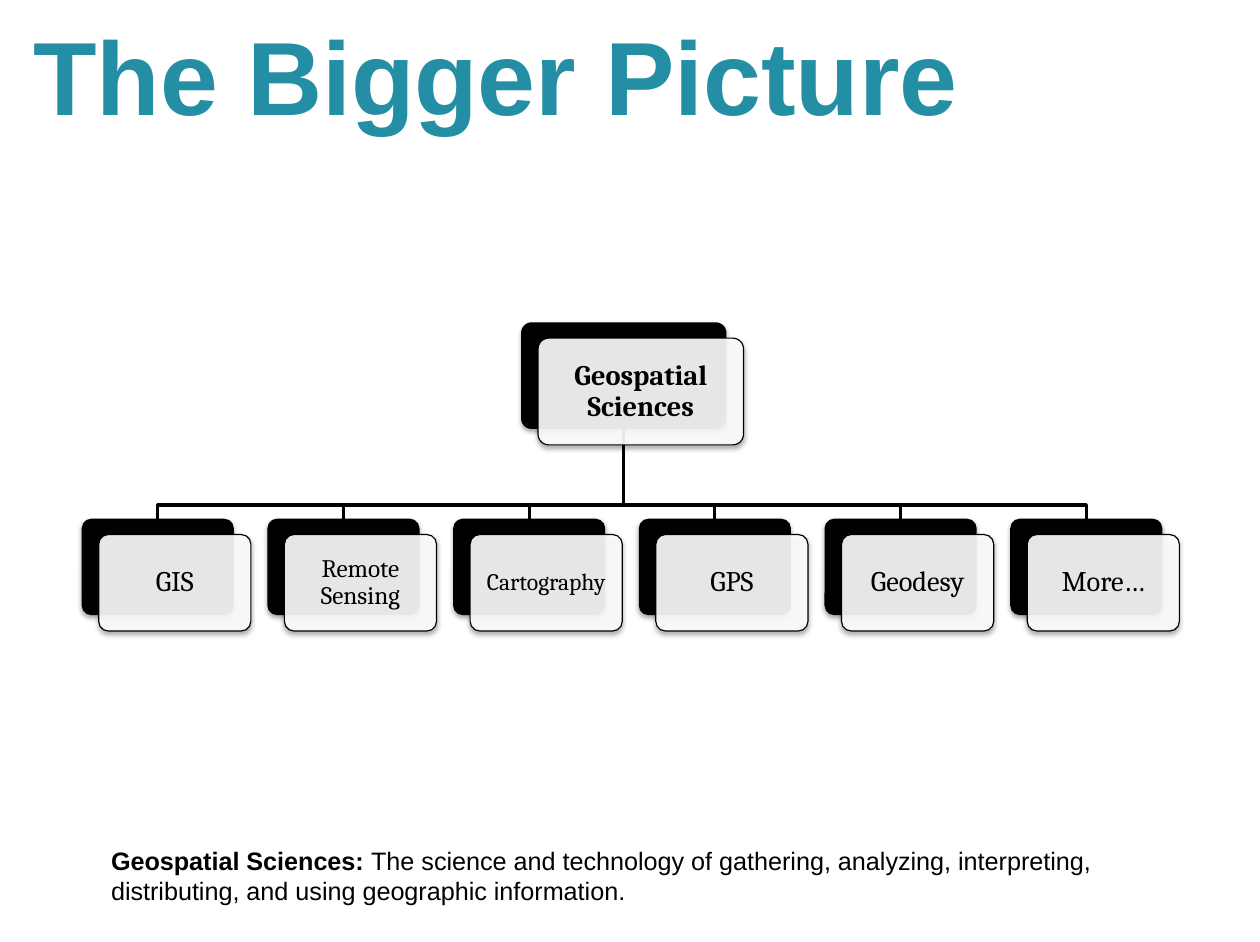
from lxml.etree import SubElement
from pptx import Presentation
from pptx.dml.color import RGBColor
from pptx.enum.shapes import MSO_SHAPE
from pptx.enum.text import MSO_ANCHOR, MSO_AUTO_SIZE, PP_ALIGN
from pptx.oxml.ns import qn
from pptx.util import Inches, Pt

SLIDE_WIDTH, SLIDE_HEIGHT = 11.1, 8.3
BLACK, WHITE, TEAL = "000000", "FFFFFF", "248FA4"

# Chart grid, in inches
FIRST_COLUMN, LAST_COLUMN = 0.72, 8.9
ROOT_ROW, BUS_ROW, BRANCH_ROW = 2.84, 4.45, 4.57
ROOT_LEFT, ROOT_WIDTH, ROOT_HEIGHT = 4.59, 1.81, 0.94
BRANCH_WIDTH, BRANCH_HEIGHT = 1.34, 0.85
CARD_SHIFT_X, CARD_SHIFT_Y = 0.15, 0.14

BRANCHES = [("GIS", 18), ("Remote Sensing", 16), ("Cartography", 15),
            ("GPS", 18), ("Geodesy", 18), ("More…", 18)]


def color(hex_value):
    return RGBColor.from_string(hex_value)


def apply(target, values):
    for name, value in values.items():
        setattr(target, name, value)


def write(paragraph, text, font_color, **font_values):
    run = paragraph.add_run()
    run.text = text
    apply(run.font, font_values)
    run.font.color.rgb = color(font_color)


def place(shape, left, top, width, height):
    apply(shape, {"left": Inches(left), "top": Inches(top),
                  "width": Inches(width), "height": Inches(height)})


def column_left(index):
    return FIRST_COLUMN + index * (LAST_COLUMN - FIRST_COLUMN) / (len(BRANCHES) - 1)


def add_soft_shadow(shape):
    shape.shadow.inherit = False
    effects = shape.element.spPr.find(qn("a:effectLst"))
    shadow = SubElement(effects, qn("a:outerShdw"), blurRad="40000", dist="23000",
                        dir="5400000", rotWithShape="0")
    tint = SubElement(shadow, qn("a:srgbClr"), val=BLACK)
    SubElement(tint, qn("a:alpha"), val="35000")


def add_plate(slide, left, top, width, height, fill_color):
    plate = slide.shapes.add_shape(MSO_SHAPE.ROUNDED_RECTANGLE, Inches(left), Inches(top),
                                   Inches(width), Inches(height))
    plate.adjustments[0] = 0.1
    plate.fill.solid()
    plate.fill.fore_color.rgb = color(fill_color)
    add_soft_shadow(plate)
    return plate


def add_node(slide, label, left, top, width, height, size, bold=False):
    backing = add_plate(slide, left, top, width, height, BLACK)
    backing.line.fill.background()

    card = add_plate(slide, left + CARD_SHIFT_X, top + CARD_SHIFT_Y, width, height, WHITE)
    card.line.color.rgb = color(BLACK)
    card.line.width = Pt(0.75)
    card_tint = card.element.spPr.find(qn("a:solidFill"))[0]
    SubElement(card_tint, qn("a:alpha"), val="90000")

    frame = card.text_frame
    inset = Inches(0.07)
    apply(frame, {"word_wrap": True, "vertical_anchor": MSO_ANCHOR.MIDDLE,
                  "margin_left": inset, "margin_right": inset,
                  "margin_top": inset, "margin_bottom": inset})
    paragraph = frame.paragraphs[0]
    apply(paragraph, {"alignment": PP_ALIGN.CENTER, "line_spacing": 0.9})
    write(paragraph, label, BLACK, name="Cambria", size=Pt(size), bold=bold)


def add_branch_line(slide, branch_center):
    root_center = ROOT_LEFT + ROOT_WIDTH / 2
    corners = [(root_center, ROOT_ROW + ROOT_HEIGHT), (root_center, BUS_ROW),
               (branch_center, BUS_ROW), (branch_center, BRANCH_ROW)]
    start, *bends = [(Inches(x), Inches(y)) for x, y in corners]
    builder = slide.shapes.build_freeform(*start)
    builder.add_line_segments(bends, close=False)
    branch_line = builder.convert_to_shape()
    branch_line.fill.background()
    branch_line.line.color.rgb = color(BLACK)
    branch_line.line.width = Pt(2)
    branch_line.shadow.inherit = False


def add_title(slide):
    title = slide.shapes.title
    place(title, 0.15, 0.05, 8.44, 1.21)
    apply(title.text_frame, {"word_wrap": False, "vertical_anchor": MSO_ANCHOR.TOP,
                             "auto_size": MSO_AUTO_SIZE.SHAPE_TO_FIT_TEXT})
    heading = title.text_frame.paragraphs[0]
    heading.alignment = PP_ALIGN.CENTER
    write(heading, "The Bigger Picture", TEAL, name="Arial", size=Pt(66), bold=True)


def add_definition(slide):
    definition = slide.shapes.add_textbox(Inches(0.88), Inches(7.4), Inches(9.63), Inches(0.64))
    apply(definition.text_frame, {"word_wrap": True,
                                  "auto_size": MSO_AUTO_SIZE.SHAPE_TO_FIT_TEXT})
    sentence = definition.text_frame.paragraphs[0]
    body = {"name": "Arial", "size": Pt(16)}
    write(sentence, "Geospatial Sciences: ", BLACK, bold=True, **body)
    write(sentence, "The science and technology of gathering, analyzing, interpreting, "
          "distributing, and using geographic information.", BLACK, bold=False, **body)


def main():
    deck = Presentation()
    apply(deck, {"slide_width": Inches(SLIDE_WIDTH), "slide_height": Inches(SLIDE_HEIGHT)})
    slide = deck.slides.add_slide(deck.slide_layouts[5])
    add_title(slide)

    # Lines lie behind the cards
    for index in range(len(BRANCHES)):
        add_branch_line(slide, column_left(index) + BRANCH_WIDTH / 2)

    # Root and its branches
    add_node(slide, "Geospatial Sciences", ROOT_LEFT, ROOT_ROW, ROOT_WIDTH, ROOT_HEIGHT,
             18, bold=True)
    for index, (field, size) in enumerate(BRANCHES):
        add_node(slide, field, column_left(index), BRANCH_ROW, BRANCH_WIDTH, BRANCH_HEIGHT, size)

    add_definition(slide)
    deck.save("out.pptx")


if __name__ == "__main__":
    main()
